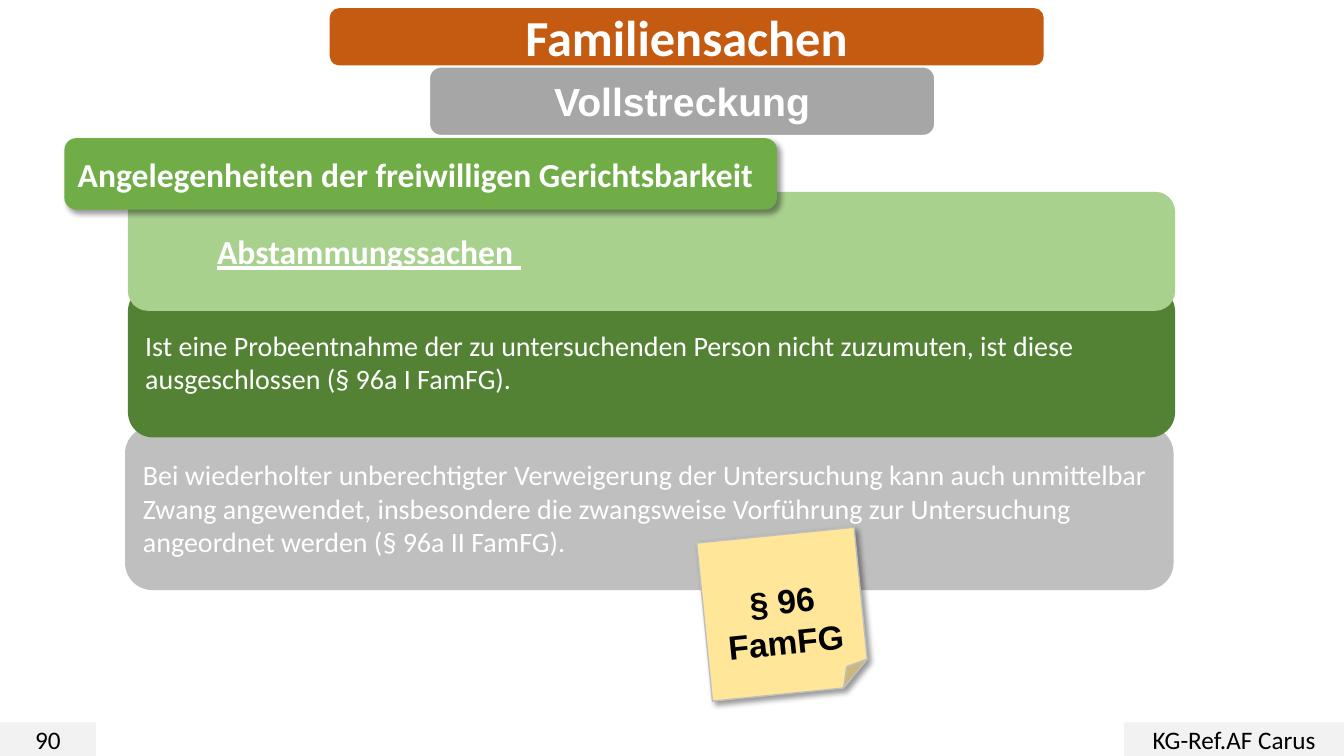
import pptx
import pptx.dml.color
import pptx.enum.shapes
import pptx.enum.text
import pptx.oxml
import pptx.oxml.ns
import pptx.util

Pt = pptx.util.Pt
RGBColor = pptx.dml.color.RGBColor
Shape = pptx.enum.shapes.MSO_SHAPE
Align = pptx.enum.text.PP_ALIGN
Anchor = pptx.enum.text.MSO_ANCHOR

WHITE = RGBColor(0xFF, 0xFF, 0xFF)
BLACK = RGBColor(0x00, 0x00, 0x00)
ORANGE = RGBColor(0xC5, 0x5A, 0x11)
PALE_GREY = RGBColor(0xF2, 0xF2, 0xF2)
LIGHT_GREY = RGBColor(0xBF, 0xBF, 0xBF)
GREY = RGBColor(0xA6, 0xA6, 0xA6)
LIGHT_GREEN = RGBColor(0xA9, 0xD1, 0x8E)
GREEN = RGBColor(0x70, 0xAD, 0x47)
DARK_GREEN = RGBColor(0x54, 0x82, 0x35)
YELLOW = RGBColor(0xFF, 0xE6, 0x99)

SHADOW = (
    '<a:outerShdw %s blurRad="50800" dist="38100" dir="2700000" algn="tl" rotWithShape="0">'
    '<a:srgbClr val="000000"><a:alpha val="40000"/></a:srgbClr></a:outerShdw>'
) % pptx.oxml.ns.nsdecls("a")


class SlideBuilder:
    font = "Calibri"
    color = WHITE

    def __init__(self, slide):
        self.slide = slide

    def set_text(self, shape, text, size, align=Align.LEFT, bold=False,
                 underline=False, color=None, font=None):
        text_frame = shape.text_frame
        text_frame.word_wrap = True
        text_frame.text = text
        paragraph = text_frame.paragraphs[0]
        paragraph.alignment = align
        style = paragraph.runs[0].font
        style.name = font or self.font
        style.size = Pt(size)
        style.bold = bold
        style.underline = underline
        style.color.rgb = color or self.color

    def box(self, bounds, fill, kind=Shape.ROUNDED_RECTANGLE, line=None, shadow=False):
        shape = self.slide.shapes.add_shape(kind, *map(Pt, bounds))
        shape.shadow.inherit = False
        shape.fill.solid()
        shape.fill.fore_color.rgb = fill
        if line is None:
            shape.line.fill.background()
        else:
            shape.line.color.rgb = line
            shape.line.width = Pt(1)
        if shadow:
            effects = shape.element.spPr.find(pptx.oxml.ns.qn("a:effectLst"))
            effects.append(pptx.oxml.parse_xml(SHADOW))
        shape.text_frame.vertical_anchor = Anchor.MIDDLE
        return shape

    def label(self, bounds, text, size, **style):
        text_box = self.slide.shapes.add_textbox(*map(Pt, bounds))
        self.set_text(text_box, text, size, **style)

    def footer(self, left, width, text):
        shape = self.box((left, 516, width, 24), PALE_GREY, Shape.RECTANGLE)
        self.set_text(shape, text, 18, align=Align.CENTER, color=BLACK)

    def sticky_note(self, bounds, text):
        note = self.box(bounds, YELLOW, Shape.FOLDED_CORNER, LIGHT_GREY, shadow=True)
        note.rotation = -5.7
        note.text_frame.margin_top = Pt(32)
        self.set_text(note, text, 24, align=Align.CENTER, bold=True, color=BLACK, font="Arial")


def main():
    presentation = pptx.Presentation()
    presentation.slide_width = Pt(960)
    presentation.slide_height = Pt(540)
    builder = SlideBuilder(presentation.slides.add_slide(presentation.slide_layouts[6]))

    coercion = builder.box((89.3, 304.5, 749, 117), LIGHT_GREY)
    builder.set_text(
        coercion,
        "Bei wiederholter unberechtigter Verweigerung der Untersuchung kann auch unmittelbar "
        "Zwang angewendet, insbesondere die zwangsweise Vorführung zur Untersuchung "
        "angeordnet werden (§ 96a II FamFG).", 20)
    exclusion = builder.box((91.4, 204.5, 748, 108), DARK_GREEN)
    builder.set_text(
        exclusion,
        "Ist eine Probeentnahme der zu untersuchenden Person nicht zuzumuten, ist diese "
        "ausgeschlossen (§ 96a I FamFG).", 20)

    title = builder.box((235.5, 5.8, 510, 41), ORANGE)
    builder.set_text(title, "Familiensachen", 36, align=Align.CENTER, bold=True)
    builder.footer(0, 68.5, "90")
    builder.footer(803, 157, "KG-Ref.AF Carus")
    subtitle = builder.box((306.7, 47.8, 361, 49), GREY, line=WHITE)
    builder.set_text(subtitle, "Vollstreckung", 28, align=Align.CENTER, bold=True, font="Arial")

    builder.box((91.4, 137, 748, 85), LIGHT_GREEN)
    builder.label((148, 161.5, 691, 133), "Abstammungssachen ", 24, bold=True, underline=True)
    heading = builder.box((46, 98.7, 509, 51), GREEN, shadow=True)
    builder.set_text(heading, "Angelegenheiten der freiwilligen Gerichtsbarkeit", 24, bold=True)
    builder.sticky_note((503, 382, 113, 113.5), "§ 96 FamFG")

    presentation.save("out.pptx")


if __name__ == "__main__":
    main()
